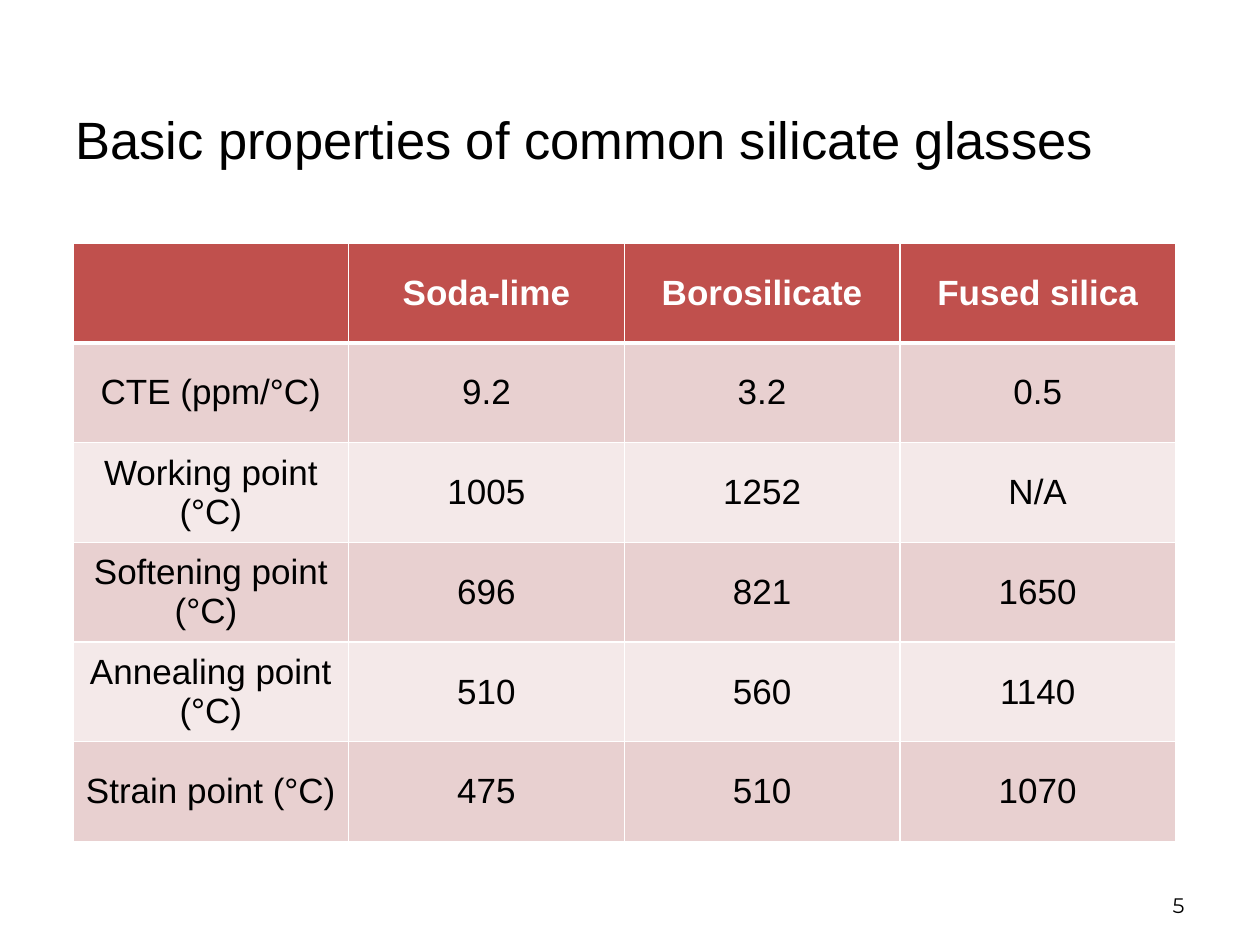
from lxml.etree import SubElement
from pptx import Presentation
from pptx.dml.color import RGBColor
from pptx.enum.text import MSO_ANCHOR, PP_ALIGN
from pptx.oxml.ns import qn
from pptx.util import Inches, Pt

BLACK = RGBColor(0x00, 0x00, 0x00)
WHITE = RGBColor(0xFF, 0xFF, 0xFF)
HEADER_RED = RGBColor(0xC0, 0x50, 0x4D)
BANDS = [RGBColor(0xF4, 0xE9, 0xE9), RGBColor(0xE8, 0xD0, 0xD0)]

ROWS = [
    ["", "Soda-lime", "Borosilicate", "Fused silica"],
    ["CTE (ppm/°C)", "9.2", "3.2", "0.5"],
    ["Working point (°C)", "1005", "1252", "N/A"],
    ["Softening point (°C) ", "696", "821", "1650"],
    ["Annealing point (°C)", "510", "560", "1140"],
    ["Strain point (°C)", "475", "510", "1070"],
]


def write(tf, text, size, color, align, anchor, font="Arial", bold=False):
    tf.word_wrap = True
    tf.vertical_anchor = anchor
    p = tf.paragraphs[0]
    p.alignment = align
    r = p.add_run()
    r.text = text
    r.font.name = font
    r.font.size = Pt(size)
    r.font.bold = bold
    r.font.color.rgb = color


def add_border(cell, side, points):
    ln = SubElement(cell._tc.get_or_add_tcPr(), qn(f"a:ln{side}"), w=str(Pt(points)))
    fill = SubElement(ln, qn("a:solidFill"))
    SubElement(fill, qn("a:srgbClr"), val=str(WHITE))


prs = Presentation()
prs.slide_width, prs.slide_height = Inches(10), Inches(7.5)
s = prs.slides.add_slide(prs.slide_layouts[6])

# Title
sp = s.shapes.add_textbox(Inches(0.5), Inches(0.62), Inches(8.83), Inches(0.96))
write(sp.text_frame, "Basic properties of common silicate glasses", 30, BLACK,
      PP_ALIGN.LEFT, MSO_ANCHOR.MIDDLE)

# Glass properties table
table = s.shapes.add_table(len(ROWS), len(ROWS[0]), Inches(0.58), Inches(1.93),
                           Inches(8.75), Inches(4.75)).table
for i, row in enumerate(ROWS):
    header = i == 0
    for j, text in enumerate(row):
        cell = table.cell(i, j)
        for side in "LRTB":
            under_header = (i, side) in [(0, "B"), (1, "T")]
            add_border(cell, side, 3 if under_header else 1)
        cell.fill.solid()
        cell.fill.fore_color.rgb = HEADER_RED if header else BANDS[i % 2]
        cell.vertical_anchor = MSO_ANCHOR.MIDDLE
        if text:
            write(cell.text_frame, text, 20, WHITE if header else BLACK,
                  PP_ALIGN.CENTER, MSO_ANCHOR.MIDDLE, bold=header)

# Slide number
sp = s.shapes.add_textbox(Inches(7.17), Inches(6.83), Inches(2.33), Inches(0.5))
write(sp.text_frame, "5", 12, BLACK, PP_ALIGN.RIGHT, MSO_ANCHOR.BOTTOM, font="Montserrat")

prs.save("out.pptx")
